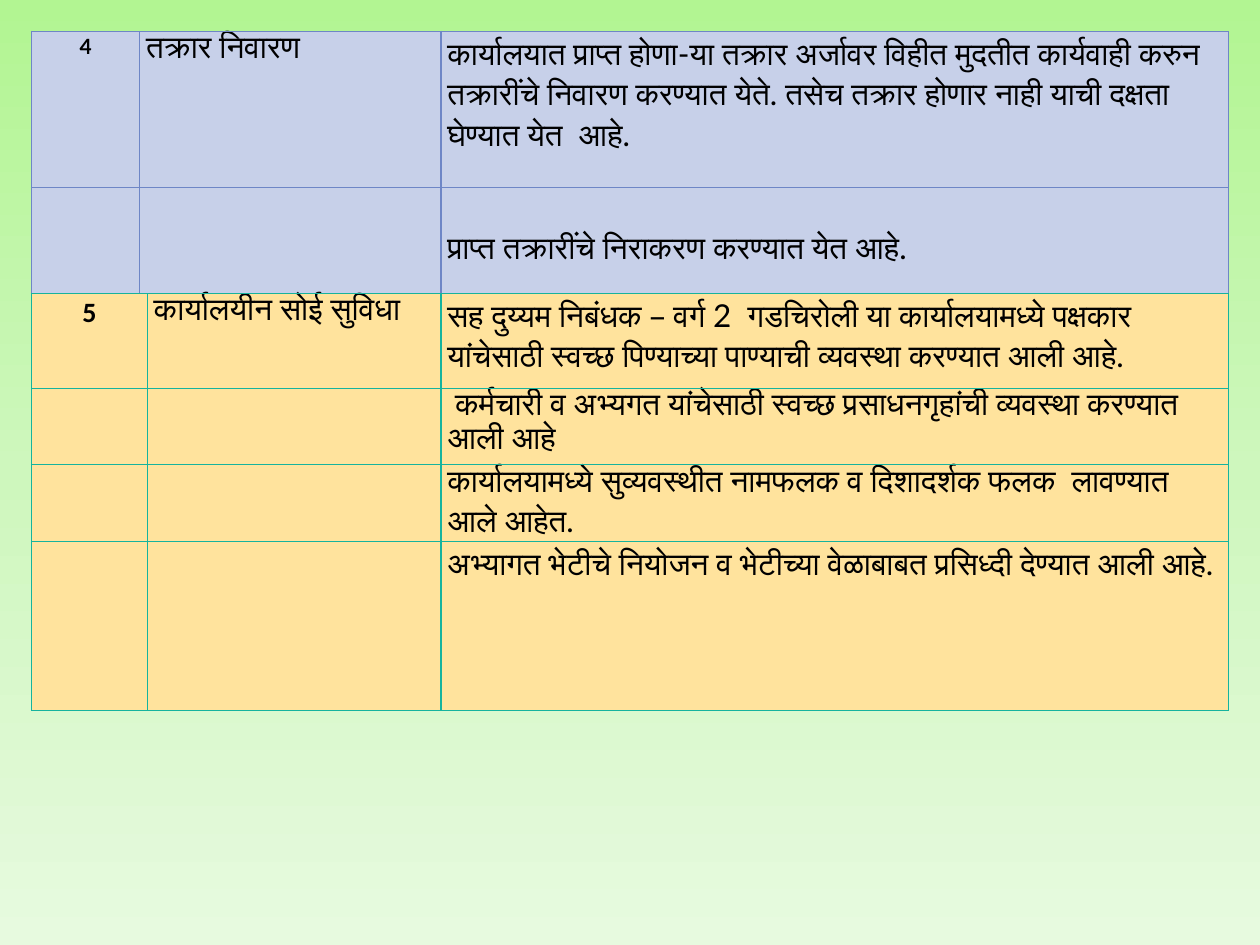
from copy import deepcopy

from lxml import etree
from pptx import Presentation
from pptx.dml.color import RGBColor
from pptx.enum.text import PP_ALIGN
from pptx.oxml.ns import qn
from pptx.util import Inches, Pt

CENTER, LEFT = PP_ALIGN.CENTER, PP_ALIGN.LEFT
GRID = 0.1  # inches per grid unit: the slide is 100 columns by 75 rows
COLORS = {
    "text": "000000",
    "blue": "C7D0E9", "blue_line": "6E86C6",
    "yellow": "FFE39D", "yellow_line": "16B39E",
    "sky_top": "B2F592", "sky_middle": "CEF7BD", "sky_bottom": "E7FADF",
}


def units(count):
    return Inches(count * GRID)


class SlideBuilder:
    """Holds the style and the current slide."""

    font, size, line_spacing = "Lato", 18, 1.07

    def __init__(self, presentation):
        self.slide = presentation.slides.add_slide(presentation.slide_layouts[6])

    def background(self, names):
        fill = self.slide.background.fill
        fill.gradient()
        fill.gradient_angle = 270
        stop_list = fill.gradient_stops[0]._gs.getparent()
        while len(stop_list) < len(names):
            stop_list.append(deepcopy(stop_list[0]))
        for index, (stop, name) in enumerate(zip(fill.gradient_stops, names)):
            stop.position = index / (len(names) - 1)
            stop.color.rgb = RGBColor.from_string(COLORS[name])

    def table(self, left, top, widths, heights, rows, color, number_style):
        frame = self.slide.shapes.add_table(
            len(heights), len(widths), units(left), units(top),
            units(sum(widths)), units(sum(heights)))
        table = frame.table
        table.first_row = table.horz_banding = False
        for column, width in zip(table.columns, widths):
            column.width = units(width)
        for row, height in zip(table.rows, heights):
            row.height = units(height)
        for row_index, texts in enumerate(rows):
            for column_index, text in enumerate(texts):
                cell = table.cell(row_index, column_index)
                self.borders(cell, color + "_line")
                cell.fill.solid()
                cell.fill.fore_color.rgb = RGBColor.from_string(COLORS[color])
                cell.margin_left = cell.margin_right = units(0.5)
                cell.margin_top = cell.margin_bottom = 0
                style = number_style if column_index == 0 else (self.font, self.size)
                self.text(cell, text, style, is_number=column_index == 0)
        return table

    def text(self, cell, text, style, is_number):
        paragraph = cell.text_frame.paragraphs[0]
        paragraph.text = text
        paragraph.alignment = CENTER if is_number else LEFT
        paragraph.line_spacing = self.line_spacing
        font = paragraph.font
        font.name, font.size, font.bold = style[0], Pt(style[1]), is_number
        font.color.rgb = RGBColor.from_string(COLORS["text"])

    def borders(self, cell, name):
        properties = cell._tc.get_or_add_tcPr()
        for side in ("a:lnL", "a:lnR", "a:lnT", "a:lnB"):
            line = etree.SubElement(properties, qn(side), w=str(Pt(0.75)))
            fill = etree.SubElement(line, qn("a:solidFill"))
            etree.SubElement(fill, qn("a:srgbClr"), val=COLORS[name])


def main():
    presentation = Presentation()
    presentation.slide_width, presentation.slide_height = units(100), units(75)
    builder = SlideBuilder(presentation)
    builder.background(["sky_top", "sky_middle", "sky_bottom"])

    # Complaint handling
    complaints = builder.table(
        2.5, 2.5, [8.6, 23.9, 62.5], [12.4, 8.4],
        [["4", "तक्रार निवारण",
          "कार्यालयात प्राप्त होणा-या तक्रार अर्जावर विहीत मुदतीत कार्यवाही करुन "
          "तक्रारींचे निवारण करण्यात येते. तसेच तक्रार होणार नाही याची दक्षता "
          "घेण्यात येत  आहे."],
         ["", "", "प्राप्त तक्रारींचे निराकरण करण्यात येत आहे."]],
        "blue", ("Lato", 12))
    complaints.cell(1, 2).margin_top = units(3)

    # Office facilities
    builder.table(
        2.5, 23.3, [9.2, 23.3, 62.5], [7.5, 6.1, 6.1, 13.4],
        [["5", "कार्यालयीन सोई सुविधा",
          "सह दुय्यम निबंधक – वर्ग 2  गडचिरोली या कार्यालयामध्ये पक्षकार "
          "यांचेसाठी स्वच्छ पिण्याच्या पाण्याची व्यवस्था करण्यात आली आहे."],
         ["", "", " कर्मचारी व अभ्यगत यांचेसाठी स्वच्छ प्रसाधनगृहांची व्यवस्था करण्यात आली आहे"],
         ["", "", "कार्यालयामध्ये सुव्यवस्थीत नामफलक व दिशादर्शक फलक  लावण्यात आले आहेत."],
         ["", "", "अभ्यागत भेटीचे नियोजन व भेटीच्या वेळाबाबत प्रसिध्दी देण्यात आली आहे."]],
        "yellow", ("Calibri", 16))

    presentation.save("out.pptx")


if __name__ == "__main__":
    main()
